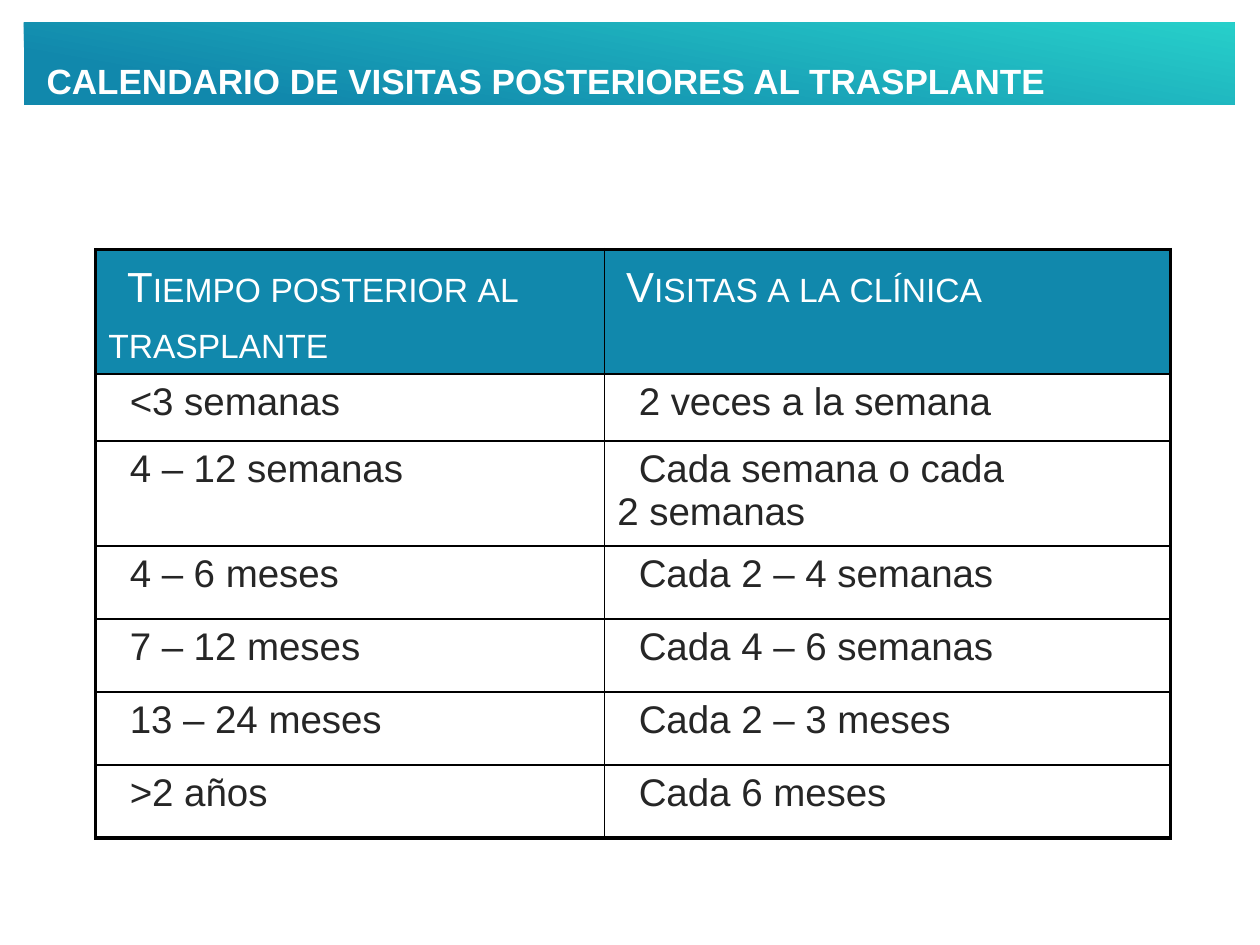
from dataclasses import dataclass

from lxml import etree
from pptx import Presentation
from pptx.dml.color import RGBColor
from pptx.enum import shapes, text
from pptx.oxml import ns
from pptx.util import Inches, Pt

COLORS = {"white": "FFFFFF", "teal": "1188AC", "aqua": "27CFCA",
          "ink": "262626", "border": "000000"}
THIN, THICK = 1, 2.25
COL_WIDTHS = (4.04, 4.49)
ROW_HEIGHTS = (0.58, 0.53) + (0.58,) * 5


@dataclass
class Visit:
    period: str
    frequency: str


HEADER = Visit("Tiempo posterior al trasplante", "Visitas a la clínica")
VISITS = [
    Visit("<3 semanas", "2 veces a la semana"),
    Visit("4 – 12 semanas", "Cada semana o cada 2\u00a0semanas"),
    Visit("4 – 6 meses", "Cada 2 – 4 semanas"),
    Visit("7 – 12 meses", "Cada 4 – 6 semanas"),
    Visit("13 – 24 meses", "Cada 2 – 3 meses"),
    Visit(">2 años", "Cada 6 meses"),
]


def rgb(name: str) -> RGBColor:
    return RGBColor.from_string(COLORS[name])


def format_run(r, color: str, **font) -> None:
    for name, value in {"name": "Arial", **font}.items():
        setattr(r.font, name, value)
    r.font.color.rgb = rgb(color)


def add_banner(slide):
    sp = slide.shapes.add_shape(shapes.MSO_SHAPE.RECTANGLE, Inches(0.19),
                                Inches(0.18), Inches(9.61), Inches(0.65))
    sp.shadow.inherit = False
    sp.line.fill.background()
    sp.fill.gradient()
    sp.fill.gradient_angle = 80
    stops = ((0.17, "teal"), (1, "aqua"))
    for stop, (position, color) in zip(sp.fill.gradient_stops, stops):
        stop.position = position
        stop.color.rgb = rgb(color)
    return sp


def set_title(title, wording: str) -> None:
    box = {"left": 0.27, "top": 0.05, "width": 9.73, "height": 0.71}
    for name, value in box.items():
        setattr(title, name, Inches(value))
    tf = title.text_frame
    frame = {"word_wrap": True, "vertical_anchor": text.MSO_ANCHOR.TOP,
             "auto_size": text.MSO_AUTO_SIZE.SHAPE_TO_FIT_TEXT}
    for name, value in frame.items():
        setattr(tf, name, value)
    p = tf.paragraphs[0]
    p.alignment = text.PP_ALIGN.LEFT
    p.line_spacing = Pt(50.6)
    r = p.add_run()
    r.text = wording
    format_run(r, "white", size=Pt(20), bold=True)


def set_borders(cell, widths: dict[str, float]) -> None:
    tc_pr = cell._tc.get_or_add_tcPr()
    for side, width in widths.items():
        ln = etree.SubElement(tc_pr, ns.qn(f"a:ln{side}"), w=str(Pt(width)))
        fill = etree.SubElement(ln, ns.qn("a:solidFill"))
        etree.SubElement(fill, ns.qn("a:srgbClr"), val=COLORS["border"])


def fill_cell(cell, wording: str, header: bool, indent: float) -> None:
    p = cell.text_frame.paragraphs[0]
    p._p.get_or_add_pPr().set("indent", str(Inches(indent)))
    p.space_before = Pt(6)
    r = p.add_run()
    r.text = wording
    if header:
        p.line_spacing = Pt(32)
        format_run(r, "white", size=Pt(24))
        r.font._element.set("cap", "small")
        cell.fill.solid()
        cell.fill.fore_color.rgb = rgb("teal")
    else:
        format_run(r, "ink", size=Pt(22))
        cell.fill.background()


def add_visit_table(slide) -> None:
    rows = [HEADER, *VISITS]
    last = len(rows) - 1
    table = slide.shapes.add_table(
        len(rows), len(COL_WIDTHS), Inches(0.76), Inches(1.98),
        Inches(sum(COL_WIDTHS)), Inches(sum(ROW_HEIGHTS))).table
    table.first_row = table.horz_banding = False
    for column, width in zip(table.columns, COL_WIDTHS):
        column.width = Inches(width)
    for i, (visit, height) in enumerate(zip(rows, ROW_HEIGHTS)):
        table.rows[i].height = Inches(height)
        for j, wording in enumerate((visit.period, visit.frequency)):
            cell = table.cell(i, j)
            set_borders(cell, {"L": THICK if j == 0 else THIN,
                               "R": THICK if j == 1 else THIN,
                               "T": THICK if i == 0 else THIN,
                               "B": THICK if i == last else THIN})
            indent = (0.15, 0.07)[j] if i == 0 else 0.17
            fill_cell(cell, wording, i == 0, indent)


def main() -> None:
    prs = Presentation()
    prs.slide_width, prs.slide_height = Inches(10), Inches(7.5)
    slide = prs.slides.add_slide(prs.slide_layouts[5])
    title = slide.shapes.title
    banner = add_banner(slide)
    title._element.addprevious(banner._element)  # banner goes behind the title
    set_title(title, "CALENDARIO DE VISITAS POSTERIORES AL TRASPLANTE")
    add_visit_table(slide)
    prs.save("out.pptx")


if __name__ == "__main__":
    main()
